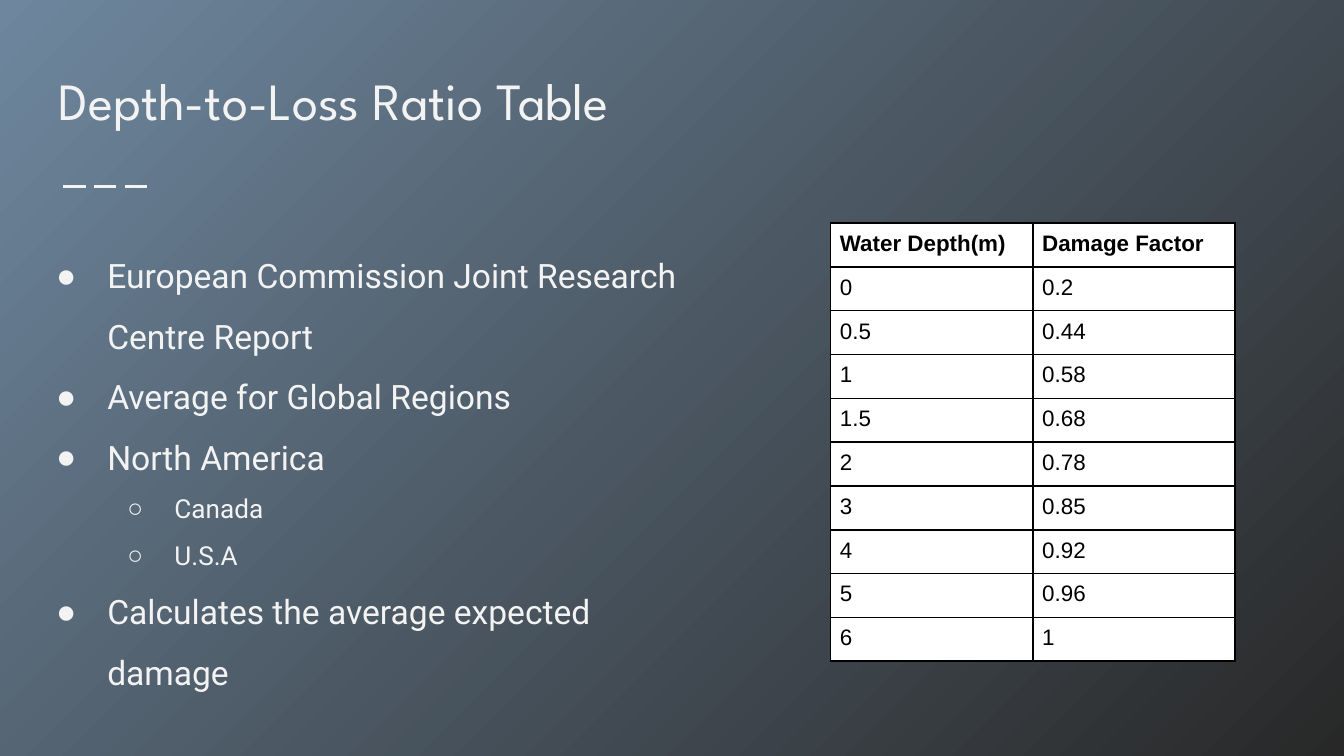
import dataclasses

import pptx
import pptx.dml.color
import pptx.enum.dml
import pptx.enum.shapes
import pptx.enum.text
import pptx.oxml
import pptx.oxml.ns
import pptx.util

Inches = pptx.util.Inches
Pt = pptx.util.Pt
Color = pptx.dml.color.RGBColor.from_string


@dataclasses.dataclass(frozen=True)
class Theme:
    """Colours, fonts and type sizes of the slide."""
    sky: str = "6E879E"
    dark: str = "282828"
    light: str = "F3F3F3"
    ink: str = "000000"
    paper: str = "FFFFFF"
    head: str = "League Spartan"
    body: str = "Roboto"
    grid: str = "Arial"
    title: int = 28
    main: int = 18
    sub: int = 14
    cell: int = 12


THEME = Theme()
POINTS = [
    (0, "European Commission Joint Research Centre Report"),
    (0, "Average for Global Regions"),
    (0, "North America"),
    (1, "Canada"),
    (1, "U.S.A"),
    (0, "Calculates the average expected damage"),
]
RATIOS = [
    ("Water Depth(m)", "Damage Factor"),
    ("0", "0.2"), ("0.5", "0.44"), ("1", "0.58"),
    ("1.5", "0.68"), ("2", "0.78"), ("3", "0.85"),
    ("4", "0.92"), ("5", "0.96"), ("6", "1"),
]


def add_xml(parent, tag, attrs="", inner=""):
    """Append a drawing element to its parent."""
    space = pptx.oxml.ns.nsdecls("a")
    parent.append(pptx.oxml.parse_xml(f"<a:{tag} {space} {attrs}>{inner}</a:{tag}>"))


def style(para, font, size, color, bold=False):
    """Format every run of a paragraph."""
    for run in para.runs:
        run.font.name = font
        run.font.size = Pt(size)
        run.font.bold = bold
        run.font.color.rgb = Color(color)


def add_frame(slide, box):
    """Add a wrapping text box with even margins."""
    frame = slide.shapes.add_textbox(*map(Inches, box)).text_frame
    frame.word_wrap = True
    frame.vertical_anchor = pptx.enum.text.MSO_ANCHOR.TOP
    frame.margin_left = frame.margin_right = Inches(0.1)
    frame.margin_top = frame.margin_bottom = Inches(0.1)
    return frame


def paint(slide):
    """Fill the background with a diagonal gradient."""
    fill = slide.background.fill
    fill.gradient()
    fill.gradient_angle = 315
    for stop, color, place in zip(fill.gradient_stops, (THEME.sky, THEME.dark), (0, 1)):
        stop.color.rgb = Color(color)
        stop.position = place


def add_title(slide, box, text):
    """Place the title and the dashed rule below it."""
    frame = add_frame(slide, box)
    frame.text = text
    style(frame.paragraphs[0], THEME.head, THEME.title, THEME.light)
    left, top = box[0] + 0.13, box[1] + 0.98
    rule = slide.shapes.add_connector(
        pptx.enum.shapes.MSO_CONNECTOR.STRAIGHT,
        Inches(left), Inches(top), Inches(left + 0.67), Inches(top))
    rule.line.color.rgb = Color(THEME.light)
    rule.line.width = Pt(1.5)
    rule.line.dash_style = pptx.enum.dml.MSO_LINE.LONG_DASH
    add_xml(rule._element.spPr, "effectLst")


def add_points(slide, box, points):
    """Place the two-level bullet list."""
    frame = add_frame(slide, box)
    frame.text = "\n".join(text for _, text in points)
    for para, (level, _) in zip(frame.paragraphs, points):
        mark, hang, size = (("●", 0.38, THEME.main), ("○", 0.35, THEME.sub))[level]
        para.level = level
        para.line_spacing = 1.5
        style(para, THEME.body, size, THEME.light)
        props = para._p.get_or_add_pPr()
        props.set("marL", str(Inches(0.5 * (level + 1))))
        props.set("indent", str(-Inches(hang)))
        add_xml(props, "buClr", inner=f'<a:srgbClr val="{THEME.light}"/>')
        add_xml(props, "buFont", f'typeface="{THEME.grid}"')
        add_xml(props, "buChar", f'char="{mark}"')


def fill_cell(cell, text, bold):
    """Write one cell with its borders and fill."""
    cell.text = text
    cell.margin_left = cell.margin_right = Inches(0.07)
    cell.margin_top = cell.margin_bottom = Inches(0.06)
    style(cell.text_frame.paragraphs[0], THEME.grid, THEME.cell, THEME.ink, bold)
    ink = f'<a:solidFill><a:srgbClr val="{THEME.ink}"/></a:solidFill>'
    for side in ("lnL", "lnR", "lnT", "lnB"):
        add_xml(cell._tc.get_or_add_tcPr(), side, f'w="{Pt(1)}"', ink)
    cell.fill.solid()
    cell.fill.fore_color.rgb = Color(THEME.paper)


def add_ratios(slide, box, rows):
    """Place the table of depths and damage factors."""
    table = slide.shapes.add_table(len(rows), len(rows[0]), *map(Inches, box)).table
    for r, row in enumerate(rows):
        for c, text in enumerate(row):
            fill_cell(table.cell(r, c), text, r == 0)


def main():
    """Build and save the slide."""
    deck = pptx.Presentation()
    deck.slide_width = Inches(10)
    deck.slide_height = deck.slide_width * 9 // 16
    slide = deck.slides.add_slide(deck.slide_layouts[6])
    paint(slide)
    add_title(slide, (0.34, 0.41, 9.32, 0.8), "Depth-to-Loss Ratio Table")
    add_points(slide, (0.2, 1.65, 4.97, 3.39), POINTS)
    add_ratios(slide, (6.18, 1.66, 3.01, 3.26), RATIOS)
    deck.save("out.pptx")


if __name__ == "__main__":
    main()
